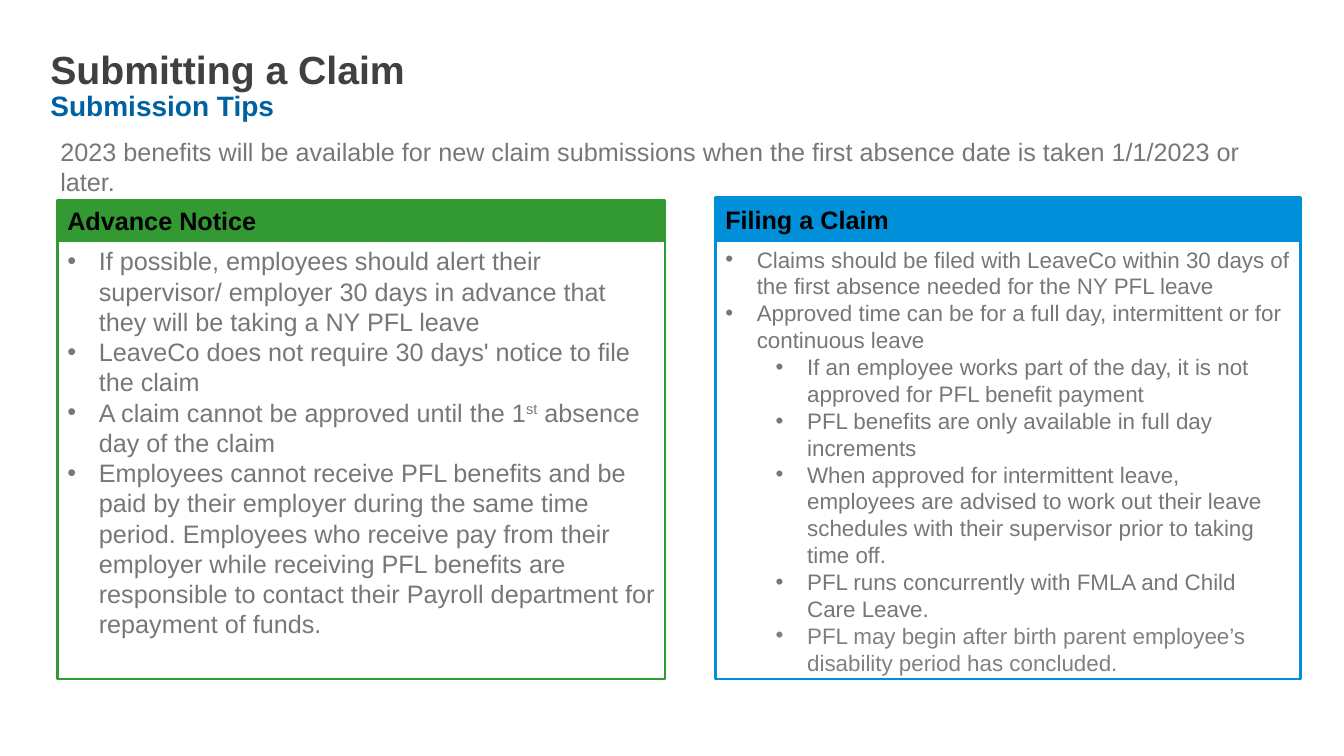
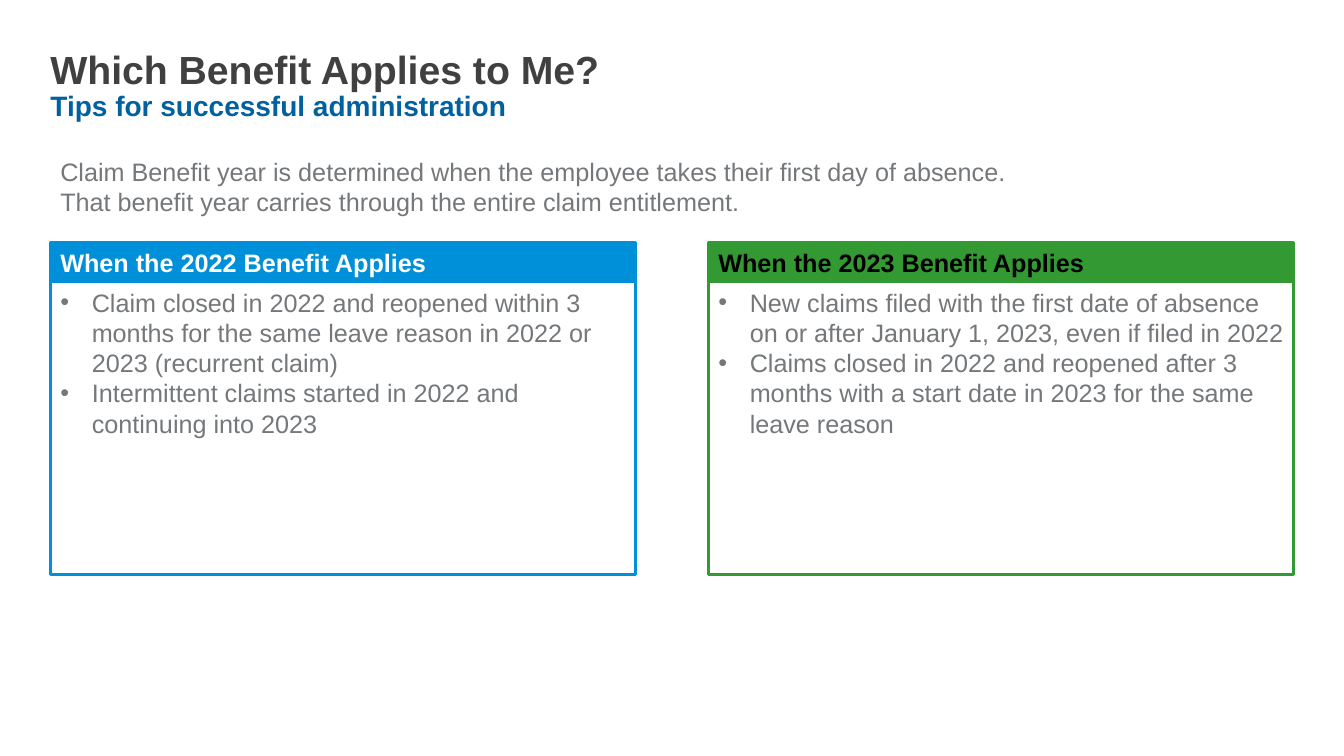
import pptx
import pptx.util
import pptx.dml.color
import pptx.enum.shapes
import pptx.enum.text
import lxml.etree

Pt = pptx.util.Pt
ANCHOR = pptx.enum.text.MSO_ANCHOR
ALIGN = pptx.enum.text.PP_ALIGN
RECT = pptx.enum.shapes.MSO_SHAPE.RECTANGLE

GREEN, BLUE = "339933", "0090DA"
BLACK, WHITE = "000000", "FFFFFF"
DARK, NAVY = "404040", "0061A0"
GREY, PALE = "75787B", "808080"

MAIN = {"size": Pt(28), "bold": True}
SUB = {"size": Pt(20), "bold": True}
HEAD = {"size": Pt(18), "bold": True}
BODY = {"size": Pt(18), "bold": False}
SMALL = {"size": Pt(16), "bold": False}
FLUSH = {"margin_left": 0, "margin_top": 0,
         "margin_right": 0, "margin_bottom": 0}
STEP, HANG = 36, 22.5


def put(item, values):
    for key, value in values.items():
        setattr(item, key, value)


def paint(color, code):
    color.rgb = pptx.dml.color.RGBColor.from_string(code)


def write(para, text, style, code):
    for part, piece in enumerate(text.split("^")):
        run = para.add_run()
        run.text = piece
        put(run.font, {"name": "Arial", **style})
        paint(run.font.color, code)
        if part % 2:
            run.font._element.set("baseline", "30000")


def bullet(para, level):
    para.level = level
    props = para._p.get_or_add_pPr()
    props.set("marL", str(int(Pt(HANG + level * STEP))))
    props.set("indent", str(-int(Pt(HANG))))
    space = "{" + props.nsmap["a"] + "}"
    lxml.etree.SubElement(props, space + "buFont", typeface="Arial")
    lxml.etree.SubElement(props, space + "buChar", char="•")


def label(slide, box, lines, **frame):
    text = slide.shapes.add_textbox(*map(Pt, box)).text_frame
    put(text, {"word_wrap": True, **frame})
    para = text.paragraphs[0]
    for row, line in enumerate(lines):
        if row:
            para.add_line_break()
        write(para, *line)
    return para


def title(slide, main, sub):
    lines = [(main, MAIN, DARK), (sub, SUB, NAVY)]
    label(slide, (36, 36, 744, 58), lines, **FLUSH).line_spacing = 0.9


def intro(slide, box, *lines):
    label(slide, box, [(line, BODY, GREY) for line in lines])


def block(slide, box, tone, anchor):
    shape = slide.shapes.add_shape(RECT, *map(Pt, box))
    shape.shadow.inherit = False
    shape.fill.background()
    shape.line.width = Pt(2)
    paint(shape.line.color, tone)
    put(shape.text_frame, {"word_wrap": True, "vertical_anchor": anchor})
    return shape


def card(slide, box, band, tone, ink, head, items, style=BODY):
    left, top, wide, high = box
    body = block(slide, (left, top + band, wide, high - band),
                 tone, ANCHOR.TOP)
    for row, (level, text, code) in enumerate(items):
        frame = body.text_frame
        para = frame.add_paragraph() if row else frame.paragraphs[0]
        bullet(para, level)
        para.alignment = ALIGN.LEFT
        write(para, text, style, code)
    bar = block(slide, (left, top, wide, band), tone, ANCHOR.MIDDLE)
    bar.fill.solid()
    paint(bar.fill.fore_color, tone)
    para = bar.text_frame.paragraphs[0]
    para.alignment = ALIGN.LEFT
    write(para, head, HEAD, ink)


def claim(slide):
    title(slide, "Submitting a Claim", "Submission Tips")
    intro(slide, (36, 93.6, 888, 47.5),
          "2023 benefits will be available for new claim submissions when "
          "the first absence date is taken 1/1/2023 or later.")
    card(slide, (511, 141, 418, 344), 31, BLUE, BLACK, "Filing a Claim", [
        (0, "Claims should be filed with LeaveCo within 30 days of the first "
            "absence needed for the NY PFL leave", GREY),
        (0, "Approved time can be for a full day, intermittent or for "
            "continuous leave", GREY),
        (1, "If an employee works part of the day, it is not approved for "
            "PFL benefit payment", GREY),
        (1, "PFL benefits are only available in full day increments", GREY),
        (1, "When approved for intermittent leave, employees are advised to "
            "work out their leave schedules with their supervisor prior to "
            "taking time off.", GREY),
        (1, "PFL runs concurrently with FMLA and Child Care Leave.", GREY),
        (1, "PFL may begin after birth parent employee’s disability period "
            "has concluded.", PALE),
    ], SMALL)
    card(slide, (41, 143, 434, 342), 29, GREEN, BLACK, "Advance Notice", [
        (0, "If possible, employees should alert their supervisor/ employer "
            "30 days in advance that they will be taking a NY PFL leave",
         GREY),
        (0, "LeaveCo does not require 30 days' notice to file the claim",
         GREY),
        (0, "A claim cannot be approved until the 1^st^ absence day of the "
            "claim", GREY),
        (0, "Employees cannot receive PFL benefits and be paid by their "
            "employer during the same time period. Employees who receive pay "
            "from their employer while receiving PFL benefits are "
            "responsible to contact their Payroll department for repayment "
            "of funds.", GREY),
    ])


def year(slide):
    title(slide, "Which Benefit Applies to Me?",
          "Tips for successful administration")
    intro(slide, (36, 108, 744, 45),
          "Claim Benefit year is determined when the employee takes their "
          "first day of absence.",
          "That benefit year carries through the entire claim entitlement.")
    sides = [
        (506, GREEN, BLACK, "When the 2023 Benefit Applies", [
            (0, "New claims filed with the first date of absence on or after "
                "January 1, 2023, even if filed in 2022", GREY),
            (0, "Claims closed in 2022 and reopened after 3 months with a "
                "start date in 2023 for the same leave reason", GREY)]),
        (36, BLUE, WHITE, "When the 2022 Benefit Applies", [
            (0, "Claim closed in 2022 and reopened within 3 months for the "
                "same leave reason in 2022 or 2023 (recurrent claim)", GREY),
            (0, "Intermittent claims started in 2022 and continuing into "
                "2023", GREY)]),
    ]
    for left, *rest in sides:
        card(slide, (left, 173.5, 418, 237), 28, *rest)


def main():
    deck = pptx.Presentation()
    put(deck, {"slide_width": Pt(960), "slide_height": Pt(540)})
    for build in (claim, year):
        build(deck.slides.add_slide(deck.slide_layouts[6]))
    deck.save("out.pptx")


if __name__ == "__main__":
    main()
